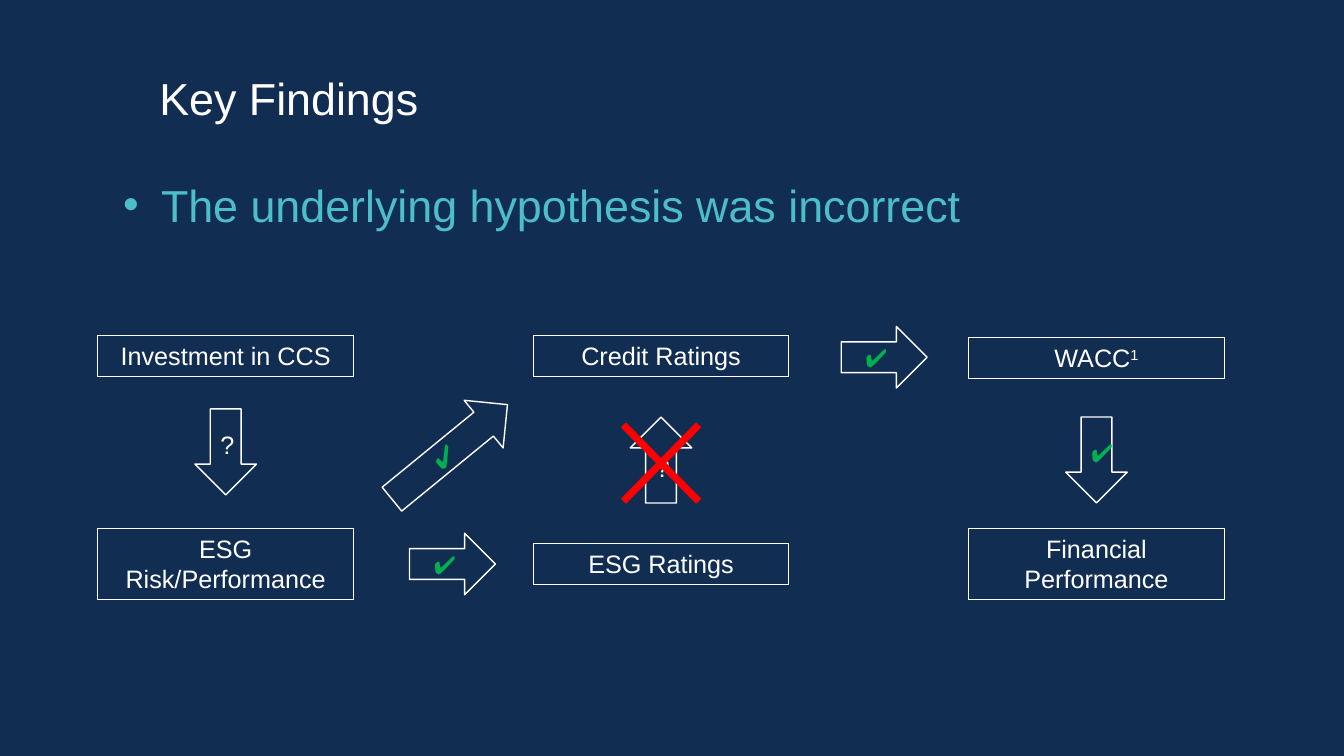
from dataclasses import dataclass
from lxml.etree import SubElement
from pptx import Presentation
from pptx.dml.color import RGBColor
from pptx.enum.shapes import MSO_SHAPE as Shape
from pptx.enum.text import MSO_ANCHOR as Anchor, MSO_AUTO_SIZE as AutoSize, PP_ALIGN as Align
from pptx.oxml.ns import qn
from pptx.util import Pt


@dataclass(frozen=True)
class Theme:
    navy: RGBColor = RGBColor(0x12, 0x2D, 0x52)
    white: RGBColor = RGBColor(0xFF, 0xFF, 0xFF)
    teal: RGBColor = RGBColor(0x4B, 0xBE, 0xC7)
    green: RGBColor = RGBColor(0x00, 0xB0, 0x50)
    red: RGBColor = RGBColor(0xFF, 0x00, 0x00)
    font: str = "Arial"
    mark_font: str = "Roboto"
    heading_size: int = 32
    label_size: int = 18
    box_line: float = 0.75
    arrow_line: float = 1


THEME = Theme()
CHECK, QUESTION = "✔", "?"


def write_text(shape, text, superscript="", size=THEME.label_size, color=THEME.white,
               font=THEME.font, align=Align.CENTER, anchor=Anchor.MIDDLE,
               auto_size=AutoSize.NONE, bullet="", indent=0, line_spacing=1, space_after=0):
    frame = shape.text_frame
    frame.word_wrap = True
    frame.auto_size = auto_size
    frame.vertical_anchor = anchor
    paragraph = frame.paragraphs[0]
    paragraph.alignment = align
    paragraph.line_spacing = line_spacing
    paragraph.space_before = Pt(0)
    paragraph.space_after = Pt(space_after)
    if bullet:
        properties = paragraph._p.get_or_add_pPr()
        properties.set("marL", str(Pt(indent)))
        properties.set("indent", str(-Pt(indent)))
        SubElement(properties, qn("a:buFont")).set("typeface", font)
        SubElement(properties, qn("a:buChar")).set("char", bullet)
    for content, baseline in ((text, 0), (superscript, 30000)):
        if not content:
            continue
        run = paragraph.add_run()
        run.text = content
        run.font.size = Pt(size)
        run.font.name = font
        run.font.color.rgb = color
        if baseline:
            run._r.get_or_add_rPr().set("baseline", str(baseline))


def place(shape, left, top, width, height):
    shape.left, shape.top, shape.width, shape.height = map(Pt, (left, top, width, height))


def add_outline(slide, kind, box, line_width, color=THEME.white):
    shape = slide.shapes.add_shape(kind, *map(Pt, box))
    shape.shadow.inherit = False
    shape.fill.background()
    shape.line.color.rgb = color
    shape.line.width = Pt(line_width)
    return shape


def add_heading(slide, left, top, width, height):
    title, body = slide.placeholders
    place(title, left + 25.8, top, width - 51.2, 59.8)
    write_text(title, "Key Findings", size=THEME.heading_size, align=Align.LEFT,
               line_spacing=0.9)
    place(body, left, top + height - 46, width, 46)
    write_text(body, "The underlying hypothesis was incorrect", size=THEME.heading_size,
               color=THEME.teal, align=Align.LEFT, anchor=Anchor.TOP,
               bullet="•", indent=27, space_after=12)


def add_label(slide, left, top, width, height, text, superscript=""):
    shape = add_outline(slide, Shape.RECTANGLE, (left, top, width, height), THEME.box_line)
    write_text(shape, text, superscript, anchor=Anchor.TOP,
               auto_size=AutoSize.SHAPE_TO_FIT_TEXT)


def add_arrow(slide, center_x, center_y, mark, rotation=0, length=61.4, text_direction=""):
    thickness = 44
    box = (center_x - length / 2, center_y - thickness / 2, length, thickness)
    shape = add_outline(slide, Shape.RIGHT_ARROW, box, THEME.arrow_line)
    shape.rotation = rotation
    if mark == CHECK:
        write_text(shape, mark, color=THEME.green, font=THEME.mark_font)
    else:
        write_text(shape, mark)
    if text_direction:
        shape.text_frame._txBody.bodyPr.set("vert", text_direction)


def add_cross(slide, center_x, center_y, width, height):
    box = (center_x - width / 2, center_y - height / 2, width, height)
    cross = add_outline(slide, Shape.MATH_MULTIPLY, box, THEME.arrow_line, THEME.red)
    cross.fill.solid()
    cross.fill.fore_color.rgb = THEME.red
    cross.adjustments[0] = 0.041


def add_diagram(slide, left, top, width, height):
    label_width, single, double = 182.4, 29.1, 51.1
    step = (width - label_width) / 2
    lower = top + height - double
    middle = lower + (double - single) / 2
    labels = (
        (0, top, single, "Investment in CCS", ""),
        (0, lower, double, "ESG Risk/Performance", ""),
        (1, top, single, "Credit Ratings", ""),
        (1, middle, single, "ESG Ratings", ""),
        (2, top + 1.4, single, "WACC", "1"),
        (2, lower, double, "Financial Performance", ""),
    )
    for column, label_top, label_height, text, superscript in labels:
        add_label(slide, left + column * step, label_top, label_width, label_height,
                  text, superscript)

    first, second, third = (left + label_width / 2 + column * step for column in range(3))
    between = top + 83.2
    add_arrow(slide, first, between, QUESTION, 90, text_direction="vert270")
    add_arrow(slide, second, between + 5.8, QUESTION, 270, text_direction="vert")
    add_arrow(slide, third, between + 5.8, CHECK, 90, text_direction="vert270")
    add_arrow(slide, first + 160, between, CHECK, 320.7, length=106.6)
    add_arrow(slide, first + 162, middle + single / 2, CHECK)
    add_arrow(slide, second + 159.4, top + 15.6, CHECK)
    add_cross(slide, second, between + 8, 102.2, 103.7)


def main():
    presentation = Presentation()
    presentation.slide_width, presentation.slide_height = Pt(960), Pt(540)
    slide = presentation.slides.add_slide(presentation.slide_layouts[1])
    slide.background.fill.solid()
    slide.background.fill.fore_color.rgb = THEME.navy
    add_heading(slide, 80.8, 42.4, 836.6, 126.8)
    add_diagram(slide, 70, 239.6, 804.4, 188.8)
    presentation.save("out.pptx")


if __name__ == "__main__":
    main()
